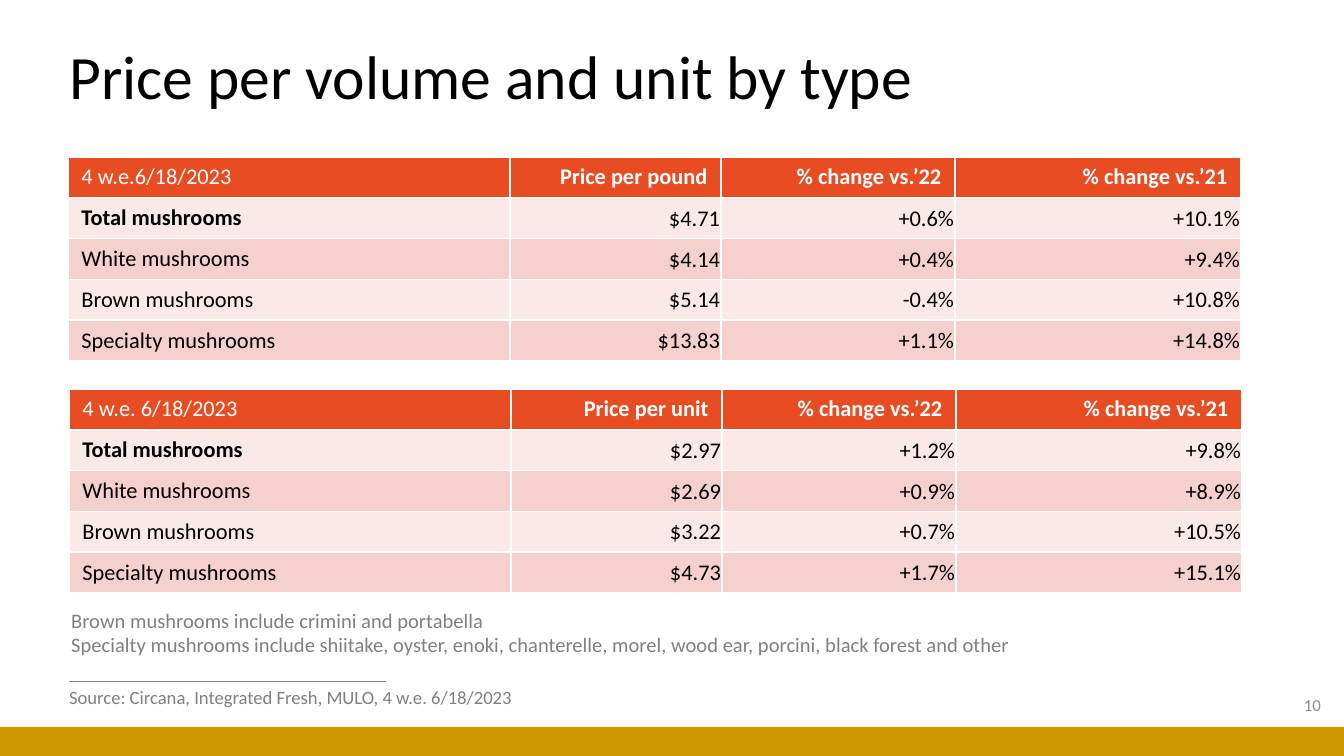
from lxml.etree import SubElement
from pptx import Presentation
from pptx.dml.color import RGBColor
from pptx.enum.shapes import MSO_CONNECTOR, MSO_SHAPE
from pptx.enum.text import MSO_ANCHOR, MSO_AUTO_SIZE, PP_ALIGN
from pptx.oxml.ns import qn
from pptx.util import Pt

EMU_PER_PX = 914400 / 134.4
FONT = "Calibri"
COLORS = {
    "header": "E84C22",
    "light": "FBE9E8",
    "dark": "F6D0CD",
    "white": "FFFFFF",
    "black": "000000",
    "grey": "808080",
    "number": "8C8C8C",
    "gold": "CC9900",
}
COLUMN_WIDTHS = [442, 211, 234, 286]
ROW_HEIGHT = 40

POUND_ROWS = [
    ["4 w.e.6/18/2023", "Price per pound", "% change vs.’22", "% change vs.’21"],
    ["Total mushrooms", "$4.71", "+0.6%", "+10.1%"],
    ["White mushrooms", "$4.14", "+0.4%", "+9.4%"],
    ["Brown mushrooms", "$5.14", "-0.4%", "+10.8%"],
    ["Specialty mushrooms", "$13.83", "+1.1%", "+14.8%"],
]
UNIT_ROWS = [
    ["4 w.e. 6/18/2023", "Price per unit", "% change vs.’22", "% change vs.’21"],
    ["Total mushrooms", "$2.97", "+1.2%", "+9.8%"],
    ["White mushrooms", "$2.69", "+0.9%", "+8.9%"],
    ["Brown mushrooms", "$3.22", "+0.7%", "+10.5%"],
    ["Specialty mushrooms", "$4.73", "+1.7%", "+15.1%"],
]


def px(length):
    return round(length * EMU_PER_PX)


def color(name):
    return RGBColor.from_string(COLORS[name])


def write(frame, text, *, size, ink="black", bold=False, align=PP_ALIGN.LEFT, spacing=None):
    """Fill a text frame, one paragraph per line of text."""
    for index, line in enumerate(text.split("\n")):
        paragraph = frame.add_paragraph() if index else frame.paragraphs[0]
        paragraph.alignment = align
        if spacing:
            paragraph.line_spacing = spacing
        span = paragraph.add_run()
        span.text = line
        span.font.name = FONT
        span.font.size = Pt(size)
        span.font.bold = bold
        span.font.color.rgb = color(ink)


def add_title(page, text):
    title = page.shapes.title
    title.left, title.top, title.width, title.height = map(px, (56, 7, 1158, 146))
    title.text_frame.auto_size = MSO_AUTO_SIZE.NONE
    title.text_frame.vertical_anchor = MSO_ANCHOR.MIDDLE
    write(title.text_frame, text, size=33, spacing=0.9)


def add_text(page, text, bounds, *, wrap=False, anchor=MSO_ANCHOR.TOP, **style):
    box = page.shapes.add_textbox(*map(px, bounds))
    box.text_frame.word_wrap = wrap
    box.text_frame.vertical_anchor = anchor
    write(box.text_frame, text, **style)


def add_bar(page, bounds):
    bar = page.shapes.add_shape(MSO_SHAPE.RECTANGLE, *map(px, bounds))
    bar.shadow.inherit = False
    bar.fill.solid()
    bar.fill.fore_color.rgb = color("gold")
    bar.line.fill.background()


def add_rule(page, left, right, top):
    rule = page.shapes.add_connector(MSO_CONNECTOR.STRAIGHT, *map(px, (left, top, right, top)))
    rule.line.color.rgb = color("grey")
    rule.line.width = Pt(0.5)
    SubElement(rule._element.spPr, qn("a:effectLst"))


def add_borders(cell):
    properties = cell._tc.get_or_add_tcPr()
    for side in ("lnL", "lnR", "lnT", "lnB"):
        border = SubElement(properties, qn(f"a:{side}"), w=str(Pt(1)))
        fill = SubElement(border, qn("a:solidFill"))
        SubElement(fill, qn("a:srgbClr"), val=COLORS["white"])


def format_cell(cell, text, row, column):
    is_header, is_label = row == 0, column == 0
    add_borders(cell)
    cell.fill.solid()
    cell.fill.fore_color.rgb = color("header" if is_header else "light" if row % 2 else "dark")
    if not is_header:
        cell.vertical_anchor = MSO_ANCHOR.MIDDLE
        if not is_label:
            cell.margin_left = cell.margin_right = cell.margin_top = px(1)
            cell.margin_bottom = 0
    write(
        cell.text_frame,
        text,
        size=12,
        ink="white" if is_header else "black",
        bold=(is_header and not is_label) or (row == 1 and is_label),
        align=PP_ALIGN.LEFT if is_label else PP_ALIGN.RIGHT,
    )


def add_price_table(page, rows, left, top):
    bounds = (left, top, sum(COLUMN_WIDTHS), ROW_HEIGHT * len(rows))
    table = page.shapes.add_table(len(rows), len(COLUMN_WIDTHS), *map(px, bounds)).table
    for column, width in zip(table.columns, COLUMN_WIDTHS):
        column.width = px(width)
    for row, values in enumerate(rows):
        table.rows[row].height = px(ROW_HEIGHT)
        for column, text in enumerate(values):
            format_cell(table.cell(row, column), text, row, column)


def main():
    deck = Presentation()
    deck.slide_width, deck.slide_height = px(1344), px(756)
    page = deck.slides.add_slide(deck.slide_layouts.get_by_name("Title Only"))

    # Footer band and title
    add_bar(page, (0, 727, 1344, 29))
    add_title(page, "Price per volume and unit by type")

    # Price tables
    add_price_table(page, POUND_ROWS, 68, 157)
    add_price_table(page, UNIT_ROWS, 69, 389)

    # Notes, source and page number
    add_text(
        page,
        "Brown mushrooms include crimini and portabella\n"
        "Specialty mushrooms include shiitake, oyster, enoki, chanterelle, morel, "
        "wood ear, porcini, black forest and other",
        (58, 601, 989, 63),
        size=11,
        ink="grey",
    )
    add_rule(page, 69, 386, 682)
    add_text(
        page,
        "Source: Circana, Integrated Fresh, MULO, 4 w.e. 6/18/2023",
        (56, 679, 481, 36),
        size=10,
        ink="grey",
    )
    add_text(
        page,
        "10",
        (1032, 685, 302, 40),
        wrap=True,
        anchor=MSO_ANCHOR.MIDDLE,
        size=9,
        ink="number",
        align=PP_ALIGN.RIGHT,
    )

    deck.save("out.pptx")


if __name__ == "__main__":
    main()
